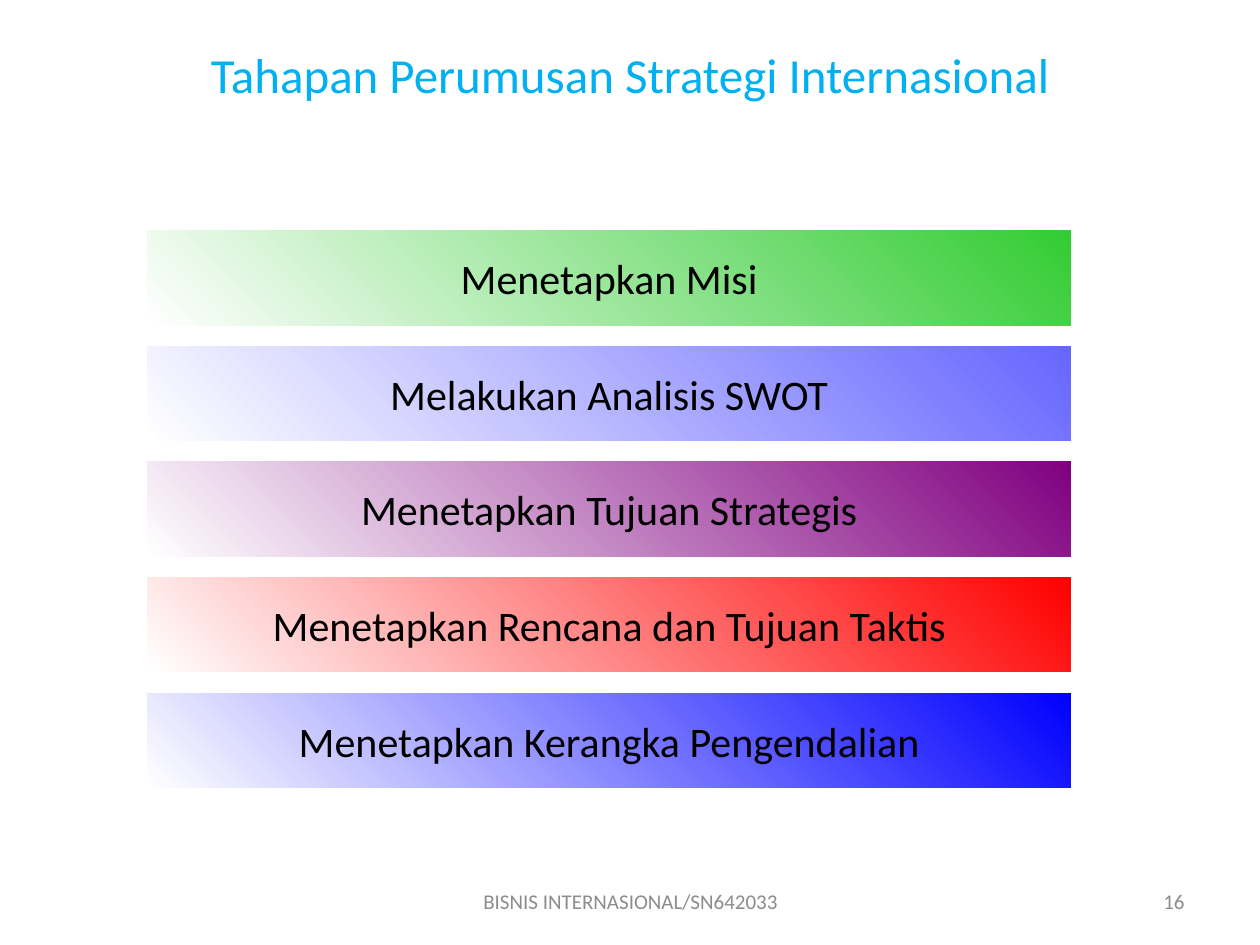
from pptx import Presentation
from pptx import util as u
from pptx.dml import color
from pptx.enum import shapes, text

Inches = u.Inches
COLORS = {
    "title": "00B0F0",
    "footer": "8C8C8C",
    "text": "000000",
    "fade": "FFFFFF",
    "green": "33CC33",
    "lavender": "6666FF",
    "purple": "800080",
    "red": "FF0000",
    "blue": "0000FF",
}


def rgb(name):
    return color.RGBColor.from_string(COLORS[name])


def write(frame, words, size, color_name, align, anchor):
    frame.vertical_anchor = anchor
    paragraph = frame.paragraphs[0]
    paragraph.alignment = align
    run = paragraph.add_run()
    run.text = words
    run.font.size = u.Pt(size)
    run.font.name = "Calibri"
    run.font.color.rgb = rgb(color_name)


presentation = Presentation()
presentation.slide_width = Inches(10)
presentation.slide_height = Inches(7.5)
slide = presentation.slides.add_slide(presentation.slide_layouts[5])

title = slide.shapes.title
title.left, title.top = Inches(0.5), Inches(0.3)
title.width, title.height = Inches(9), Inches(1.25)
write(title.text_frame, "Tahapan Perumusan Strategi Internasional", 28, "title",
      text.PP_ALIGN.CENTER, text.MSO_ANCHOR.TOP)

stages = [
    ("Menetapkan Misi", "green"),
    ("Melakukan Analisis SWOT", "lavender"),
    ("Menetapkan Tujuan Strategis", "purple"),
    ("Menetapkan Rencana dan Tujuan Taktis", "red"),
    ("Menetapkan Kerangka Pengendalian", "blue"),
]
first_top, last_top = 1.83, 5.5
pitch = (last_top - first_top) / (len(stages) - 1)
for index, (words, color_name) in enumerate(stages):
    bar = slide.shapes.add_shape(
        shapes.MSO_SHAPE.RECTANGLE, Inches(1.17), Inches(first_top + index * pitch),
        Inches(7.33), Inches(0.75))
    bar.shadow.inherit = False
    bar.line.fill.background()
    bar.fill.gradient()
    bar.fill.gradient_angle = 45
    for stop, stop_color in zip(bar.fill.gradient_stops, ("fade", color_name)):
        stop.color.rgb = rgb(stop_color)
    bar.text_frame.word_wrap = False
    write(bar.text_frame, words, 24, "text", text.PP_ALIGN.CENTER, text.MSO_ANCHOR.MIDDLE)

footers = [
    ("16", 7.17, 2.33, text.PP_ALIGN.RIGHT),
    ("BISNIS INTERNASIONAL/SN642033", 3.42, 3.17, text.PP_ALIGN.CENTER),
]
for words, left, width, align in footers:
    footer = slide.shapes.add_textbox(Inches(left), Inches(6.95), Inches(width), Inches(0.4))
    footer.text_frame.word_wrap = True
    write(footer.text_frame, words, 12, "footer", align, text.MSO_ANCHOR.MIDDLE)

presentation.save("out.pptx")
